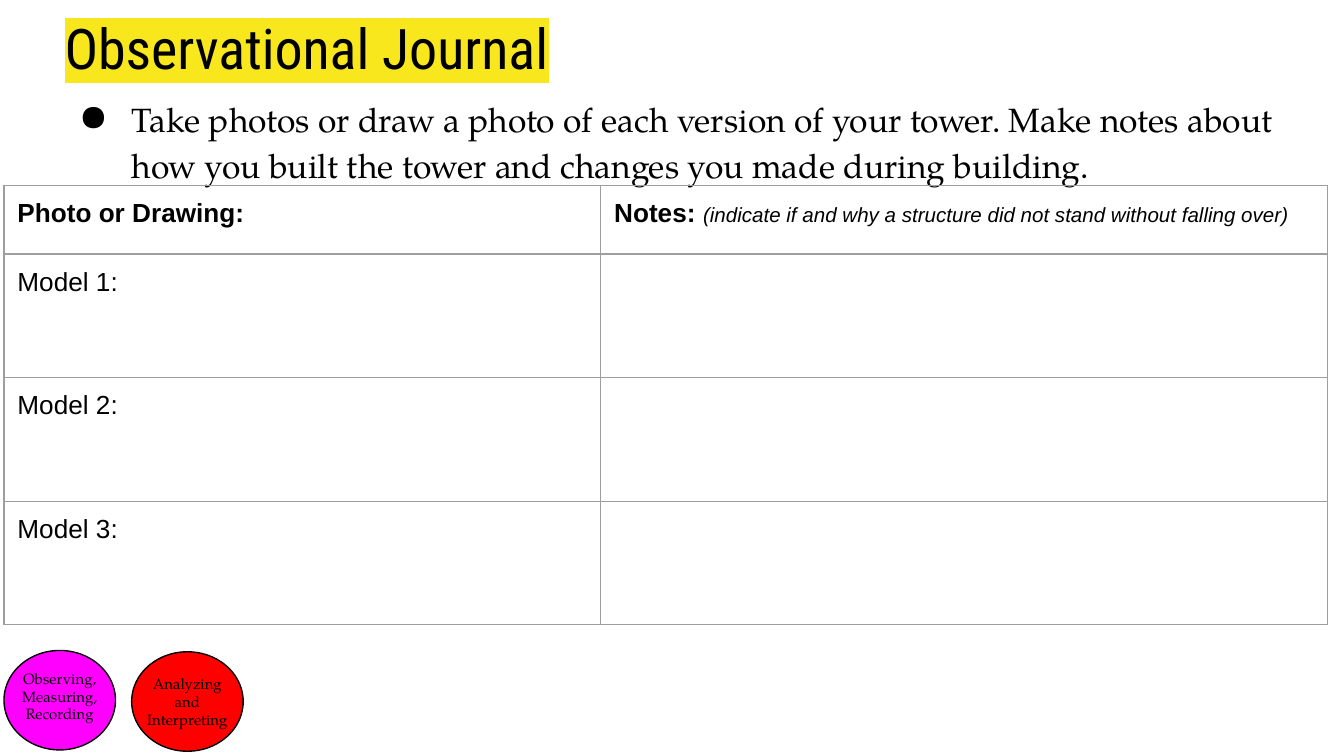
from dataclasses import dataclass

from lxml.etree import SubElement
from pptx import Presentation
from pptx.dml.color import RGBColor
from pptx.enum.shapes import MSO_SHAPE as Shape
from pptx.enum.text import MSO_ANCHOR as Anchor, MSO_AUTO_SIZE as AutoSize, PP_ALIGN as Align
from pptx.oxml.ns import qn
from pptx.util import Inches, Pt

COLORS = {"black": "000000", "highlight": "F8E71C", "border": "9E9E9E",
          "magenta": "FF00FF", "red": "FF0000"}
SERIF = "TeX Gyre Pagella"
INSET = 0.1


@dataclass
class Badge:
    left: float
    top: float
    label_top: float
    label: str
    color: str


@dataclass
class Span:
    text: str
    size: float = 14
    bold: bool = False
    italic: bool = False


BADGES = [
    Badge(0.03, 4.84, 4.88, "Observing, Measuring, Recording", "magenta"),
    Badge(0.98, 4.85, 4.92, "Analyzing and Interpreting", "red"),
]
HEADERS = [
    [Span("Photo or Drawing:", bold=True)],
    [Span("Notes: ", bold=True),
     Span("(indicate if and why a structure did not stand without falling over)", 11, italic=True)],
]
ROWS = [HEADERS] + [[[Span(f"Model {number}:")], []] for number in (1, 2, 3)]


def rgb(name: str) -> RGBColor:
    return RGBColor.from_string(COLORS[name])


def style_font(font, name: str, size: float) -> None:
    font.name, font.size = name, Pt(size)
    font.color.rgb = rgb("black")


def prepare_frame(frame) -> None:
    frame.word_wrap = True
    frame.auto_size = AutoSize.NONE
    frame.vertical_anchor = Anchor.TOP
    frame.margin_left = frame.margin_right = Inches(INSET)
    frame.margin_top = frame.margin_bottom = Inches(INSET)


def add_text(page, left: float, top: float, width: float, height: float, text: str, size: float):
    box = page.shapes.add_textbox(Inches(left), Inches(top), Inches(width), Inches(height))
    prepare_frame(box.text_frame)
    box.text_frame.text = text
    para = box.text_frame.paragraphs[0]
    style_font(para.runs[0].font, SERIF, size)
    return para


def add_title(page) -> None:
    title = page.shapes.title
    title.left, title.top = Inches(0.38), Inches(0)
    title.width, title.height = Inches(9.32), Inches(0.63)
    prepare_frame(title.text_frame)
    title.text_frame.text = "Observational Journal"
    para = title.text_frame.paragraphs[0]
    para.alignment = Align.LEFT
    font = para.runs[0].font
    style_font(font, "Roboto Condensed", 30)
    properties = para.runs[0]._r.get_or_add_rPr()
    highlight = SubElement(properties, qn("a:highlight"))
    SubElement(highlight, qn("a:srgbClr"), val=COLORS["highlight"])
    properties.find(qn("a:solidFill")).addnext(highlight)


def add_bullet(para, indent: float, hanging: float, size: float) -> None:
    properties = para._p.get_or_add_pPr()
    properties.set("marL", str(Inches(indent)))
    properties.set("indent", str(-Inches(hanging)))
    color = SubElement(properties, qn("a:buClr"))
    SubElement(color, qn("a:srgbClr"), val=COLORS["black"])
    SubElement(properties, qn("a:buSzPts"), val=str(int(size * 100)))
    SubElement(properties, qn("a:buFont"), typeface=SERIF)
    SubElement(properties, qn("a:buChar"), char="●")


def add_borders(cell) -> None:
    properties = cell._tc.get_or_add_tcPr()
    for position, side in enumerate(("lnL", "lnR", "lnT", "lnB")):
        line = SubElement(properties, qn(f"a:{side}"), w=str(Pt(0.75)))
        fill = SubElement(line, qn("a:solidFill"))
        SubElement(fill, qn("a:srgbClr"), val=COLORS["border"])
        properties.insert(position, line)


def fill_cell(cell, spans: list[Span]) -> None:
    cell.fill.background()
    cell.margin_left = cell.margin_right = Inches(INSET)
    cell.margin_top = cell.margin_bottom = Inches(INSET)
    add_borders(cell)
    para = cell.text_frame.paragraphs[0]
    for span in spans:
        run = para.add_run()
        run.text = span.text
        style_font(run.font, "Arial", span.size)
        run.font.bold, run.font.italic = span.bold, span.italic


def add_journal(page) -> None:
    frame = page.shapes.add_table(len(ROWS), 2, Inches(0.03), Inches(1.38),
                                  Inches(9.85), Inches(3.28))
    table = frame.table
    table.first_row = table.horz_banding = False
    for column, width in zip(table.columns, (4.44, 5.41)):
        column.width = Inches(width)
    for index, (row, contents) in enumerate(zip(table.rows, ROWS)):
        row.height = Inches(0.92 if index else 0.51)
        for cell, spans in zip(row.cells, contents):
            fill_cell(cell, spans)


def add_badge(page, badge: Badge) -> None:
    width, height = 0.83, 0.74
    oval = page.shapes.add_shape(Shape.OVAL, Inches(badge.left), Inches(badge.top),
                                 Inches(width), Inches(height))
    oval.shadow.inherit = False
    oval.fill.solid()
    oval.fill.fore_color.rgb = rgb(badge.color)
    oval.line.color.rgb = rgb("black")
    oval.line.width = Pt(0.75)
    para = add_text(page, badge.left, badge.label_top, width, height, badge.label, 8)
    para.alignment = Align.CENTER


def main() -> None:
    # Widescreen 16:9 page
    deck = Presentation()
    deck.slide_width = Inches(10)
    deck.slide_height = deck.slide_width * 9 // 16
    page = deck.slides.add_slide(deck.slide_layouts[5])

    # Title and instruction
    add_title(page)
    instruction = add_text(page, 0.38, 0.59, 9.32, 0.79,
                           "Take photos or draw a photo of each version of your tower. "
                           "Make notes about how you built the tower and changes you made "
                           "during building.", 18)
    instruction.line_spacing = 1.15
    add_bullet(instruction, 0.5, 0.38, 18)

    # Journal table
    add_journal(page)

    # Skill badges
    for badge in BADGES:
        add_badge(page, badge)

    deck.save("out.pptx")


if __name__ == "__main__":
    main()
